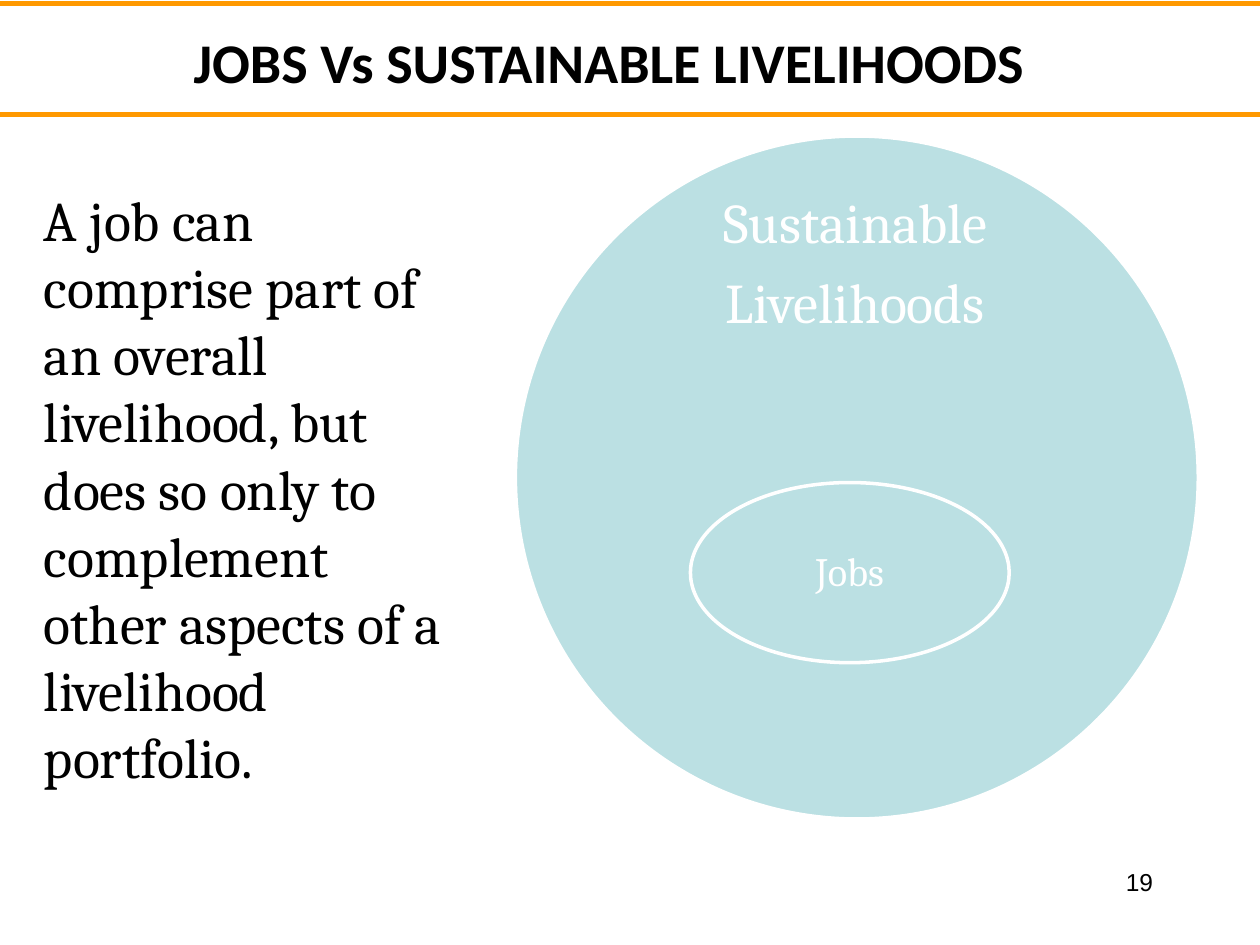
from pptx import Presentation
from pptx.dml.color import RGBColor as Rgb
from pptx.enum.shapes import MSO_CONNECTOR as Conn, MSO_SHAPE as Geo
from pptx.enum.text import MSO_ANCHOR as Anchor, PP_ALIGN as Align
from pptx.oxml.ns import qn
from pptx.util import Inches, Pt
from lxml.etree import SubElement as Sub

WIDE, HIGH = 10, 7.5
ORANGE, AQUA, WHITE, BLACK = "FF9900", "BBE0E3", "FFFFFF", "000000"


def hue(code):
    return Rgb.from_string(code)


def put(obj, vals):
    for key, val in vals.items():
        setattr(obj, key, val)


def rule(slide, y):
    """Draw a line across the full width."""
    top = Inches(y)
    line = slide.shapes.add_connector(Conn.STRAIGHT, 0, top, Inches(WIDE), top)
    line.line.width = Pt(3)
    line.line.color.rgb = hue(ORANGE)
    Sub(line._element.spPr, qn("a:effectLst"))


def oval(slide, box):
    """Draw an aqua ellipse with a white edge."""
    shape = slide.shapes.add_shape(Geo.OVAL, *map(Inches, box))
    shape.shadow.inherit = False
    shape.fill.solid()
    shape.fill.fore_color.rgb = hue(AQUA)
    shape.line.color.rgb = hue(WHITE)
    shape.line.width = Pt(2)


def text(slide, box, lines, size, face, ink=BLACK, bold=False,
         para=None, frame=None):
    """Add a text box with one paragraph for each line."""
    body = slide.shapes.add_textbox(*map(Inches, box)).text_frame
    put(body, {"word_wrap": True, **(frame or {})})
    body.text = "\n".join(lines)
    for part in body.paragraphs:
        put(part, para or {})
        font = part.runs[0].font
        put(font, {"size": Pt(size), "name": face, "bold": bold})
        font.color.rgb = hue(ink)


def main():
    deck = Presentation()
    put(deck, {"slide_width": Inches(WIDE), "slide_height": Inches(HIGH)})
    slide = deck.slides.add_slide(deck.slide_layouts[6])
    mid = {"alignment": Align.CENTER}
    label = {**mid, "line_spacing": 0.9}

    # Title between two rules
    for y in (0.03, 0.91):
        rule(slide, y)
    text(slide, (0.5, 0.17, 8.67, 0.64), ["JOBS Vs SUSTAINABLE LIVELIHOODS"],
         32, "Calibri", bold=True, para=mid)

    # Jobs as a part of livelihoods
    oval(slide, (4.09, 1.08, 5.42, 5.42))
    text(slide, (5.37, 1.49, 2.84, 0.92), ["Sustainable", "Livelihoods"],
         32, "Cambria", WHITE, para={**label, "space_after": Pt(11.2)},
         frame={"margin_top": Inches(0.06)})
    oval(slide, (5.48, 3.83, 2.53, 1.43))
    text(slide, (5.85, 4.19, 1.79, 0.72), ["Jobs"], 23, "Cambria", WHITE,
         para=label, frame={"vertical_anchor": Anchor.MIDDLE})

    # Statement on the left
    text(slide, (0.25, 1.42, 3.42, 4.95),
         ["A job can comprise part of an overall livelihood, but does so only "
          "to complement other aspects of a livelihood portfolio."],
         32, "Cambria")

    # Page number
    text(slide, (7.17, 6.83, 2.08, 0.5), ["19"], 14, "Arial",
         para={"alignment": Align.RIGHT})

    deck.save("out.pptx")


if __name__ == "__main__":
    main()
